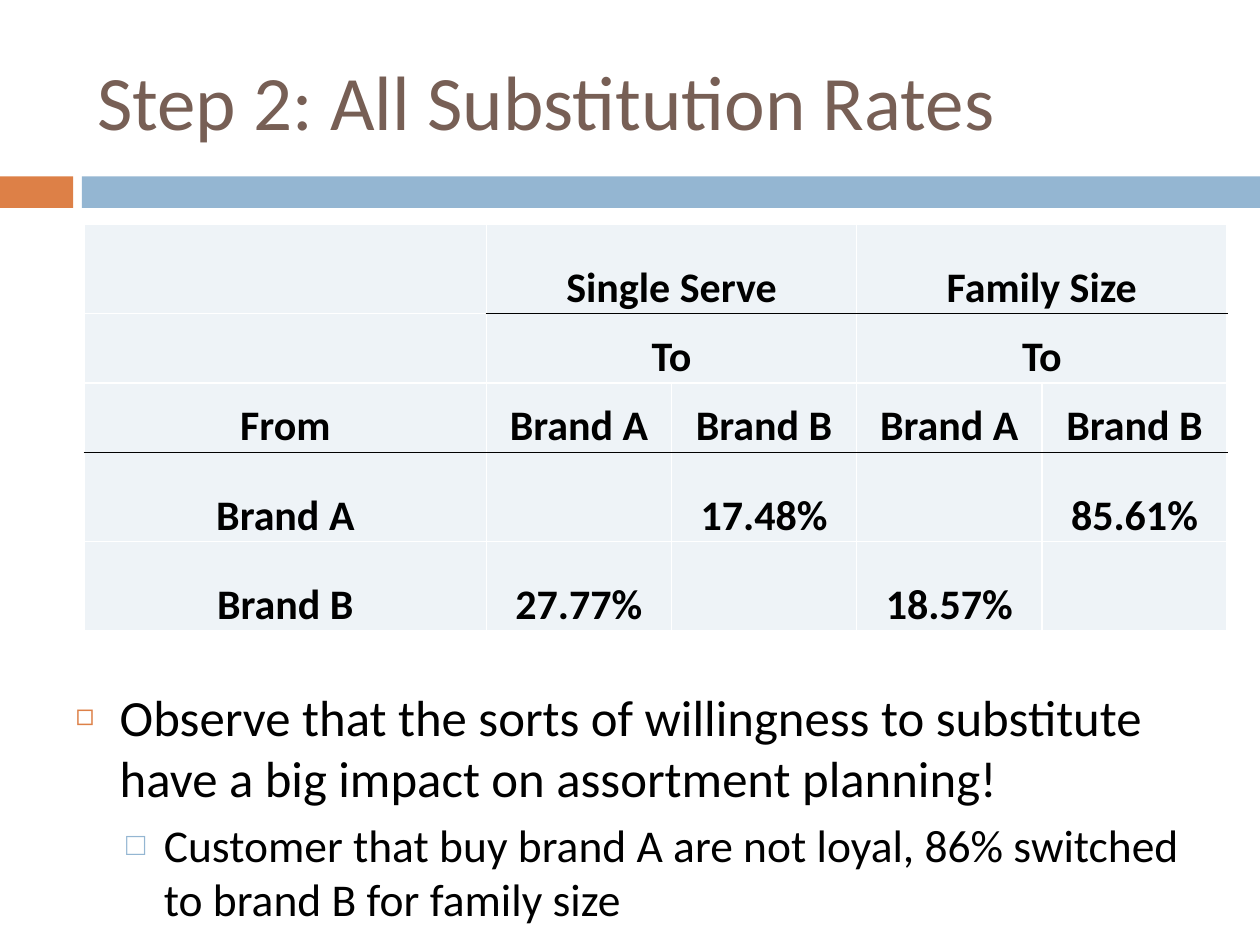
from lxml import etree
from pptx import Presentation
from pptx.dml.color import RGBColor
from pptx.enum.shapes import MSO_SHAPE
from pptx.enum.text import MSO_ANCHOR, MSO_AUTO_SIZE, PP_ALIGN
from pptx.oxml.ns import qn
from pptx.util import Inches, Pt

RECT = MSO_SHAPE.RECTANGLE
LEFT, CENTER = PP_ALIGN.LEFT, PP_ALIGN.CENTER
TOP, MIDDLE, BOTTOM = MSO_ANCHOR.TOP, MSO_ANCHOR.MIDDLE, MSO_ANCHOR.BOTTOM

FONT = "Calibri"
BLACK, WHITE, BROWN = "000000", "FFFFFF", "775F55"
ORANGE, BLUE, PALE = "DD8047", "94B6D2", "EEF3F7"

# Content
TITLE = "Step 2: All Substitution Rates"
RATES = [
    ["", "Single Serve", "", "Family Size", ""],
    ["", "To", "", "To", ""],
    ["From", "Brand A", "Brand B", "Brand A", "Brand B"],
    ["Brand A", "", "17.48%", "", "85.61%"],
    ["Brand B", "27.77%", "", "18.57%", ""],
]
COL_WIDTHS = [3.19] + [1.47] * 4
ROW_HEIGHTS = [0.71, 0.55, 0.55, 0.71, 0.71]
RULED_FROM = {0: 1, 2: 0}  # row with a black rule below: first ruled column
# text, level, size, space before, indent, hanging, bullet, bullet colour, bullet %
BULLETS = [
    ("Observe that the sorts of willingness to substitute have a big impact "
     "on assortment planning!", 0, 29, 7, 0.35, 0.35, "◻", ORANGE, 60),
    ("Customer that buy brand A are not loyal, 86% switched to brand B "
     "for family size", 1, 26, 5.5, 0.7, 0.3, "□", BLUE, 70),
]
BARS = [(0, 0.58, ORANGE), (0.65, 9.35, BLUE)]  # left, width, colour


def rgb(color):
    return RGBColor.from_string(color)


def place(sp, left, top, width, height):
    sp.left, sp.top = Inches(left), Inches(top)
    sp.width, sp.height = Inches(width), Inches(height)


def write(p, text, size, color, align, bold=False):
    p.alignment = align
    r = p.add_run()
    r.text = text
    r.font.name, r.font.size, r.font.bold = FONT, Pt(size), bold
    r.font.color.rgb = rgb(color)


def set_bullet(p, char, color, percent, indent, hanging):
    pPr = p._p.get_or_add_pPr()
    pPr.set("marL", str(Inches(indent)))
    pPr.set("indent", str(-Inches(hanging)))
    clr = etree.SubElement(pPr, qn("a:buClr"))
    etree.SubElement(clr, qn("a:srgbClr"), val=color)
    etree.SubElement(pPr, qn("a:buSzPct"), val=str(percent * 1000))
    etree.SubElement(pPr, qn("a:buChar"), char=char)


def set_borders(cell, top, bottom):
    tcPr = cell._tc.get_or_add_tcPr()
    sides = [("L", WHITE), ("R", WHITE), ("T", top), ("B", bottom)]
    for i, (side, color) in enumerate(sides):
        ln = etree.Element(qn(f"a:ln{side}"), w=str(Pt(1)))
        fill = etree.SubElement(ln, qn("a:solidFill"))
        etree.SubElement(fill, qn("a:srgbClr"), val=color)
        tcPr.insert(i, ln)


def rule_color(row, col):
    ruled = row in RULED_FROM and col >= RULED_FROM[row]
    return BLACK if ruled else WHITE


prs = Presentation()
prs.slide_width, prs.slide_height = Inches(10), Inches(7.5)
s = prs.slides.add_slide(prs.slide_layouts[1])

# Bars under the title
for left, width, color in BARS:
    sp = s.shapes.add_shape(RECT, Inches(left), Inches(1.4),
                            Inches(width), Inches(0.25))
    sp.shadow.inherit = False
    sp.fill.solid()
    sp.fill.fore_color.rgb = rgb(color)
    sp.line.fill.background()

# Title
title = s.shapes.title
place(title, 0.67, 0.25, 8.92, 1.08)
tf = title.text_frame
tf.auto_size, tf.vertical_anchor = MSO_AUTO_SIZE.NONE, MIDDLE
write(tf.paragraphs[0], TITLE, 44, BROWN, LEFT)

# Bulleted body, starting below the table
body = s.placeholders[1]
place(body, 0.5, 4.85, 9, 2.44)
tf = body.text_frame
tf.auto_size, tf.vertical_anchor = MSO_AUTO_SIZE.NONE, TOP
tf.margin_top = Inches(0.59)
for i, (text, level, size, before, indent, hanging, *mark) in enumerate(BULLETS):
    p = tf.add_paragraph() if i else tf.paragraphs[0]
    p.level, p.space_before = level, Pt(before)
    write(p, text, size, BLACK, LEFT)
    set_bullet(p, *mark, indent, hanging)

# Table of substitution rates
table = s.shapes.add_table(len(ROW_HEIGHTS), len(COL_WIDTHS),
                           Inches(0.67), Inches(1.78),
                           Inches(sum(COL_WIDTHS)),
                           Inches(sum(ROW_HEIGHTS))).table
table.first_row = table.horz_banding = False
for column, width in zip(table.columns, COL_WIDTHS):
    column.width = Inches(width)
for row, height in zip(table.rows, ROW_HEIGHTS):
    row.height = Inches(height)
for row in (0, 1):
    for col in (1, 3):
        table.cell(row, col).merge(table.cell(row, col + 1))

for i, values in enumerate(RATES):
    for j, value in enumerate(values):
        cell = table.cell(i, j)
        cell.fill.solid()
        cell.fill.fore_color.rgb = rgb(PALE)
        set_borders(cell, rule_color(i - 1, j), rule_color(i, j))
        if value:
            cell.vertical_anchor = BOTTOM
            cell.margin_left = cell.margin_right = cell.margin_top = Inches(0.01)
            cell.margin_bottom = 0
            write(cell.text_frame.paragraphs[0], value, 24, BLACK, CENTER, True)

prs.save("out.pptx")
